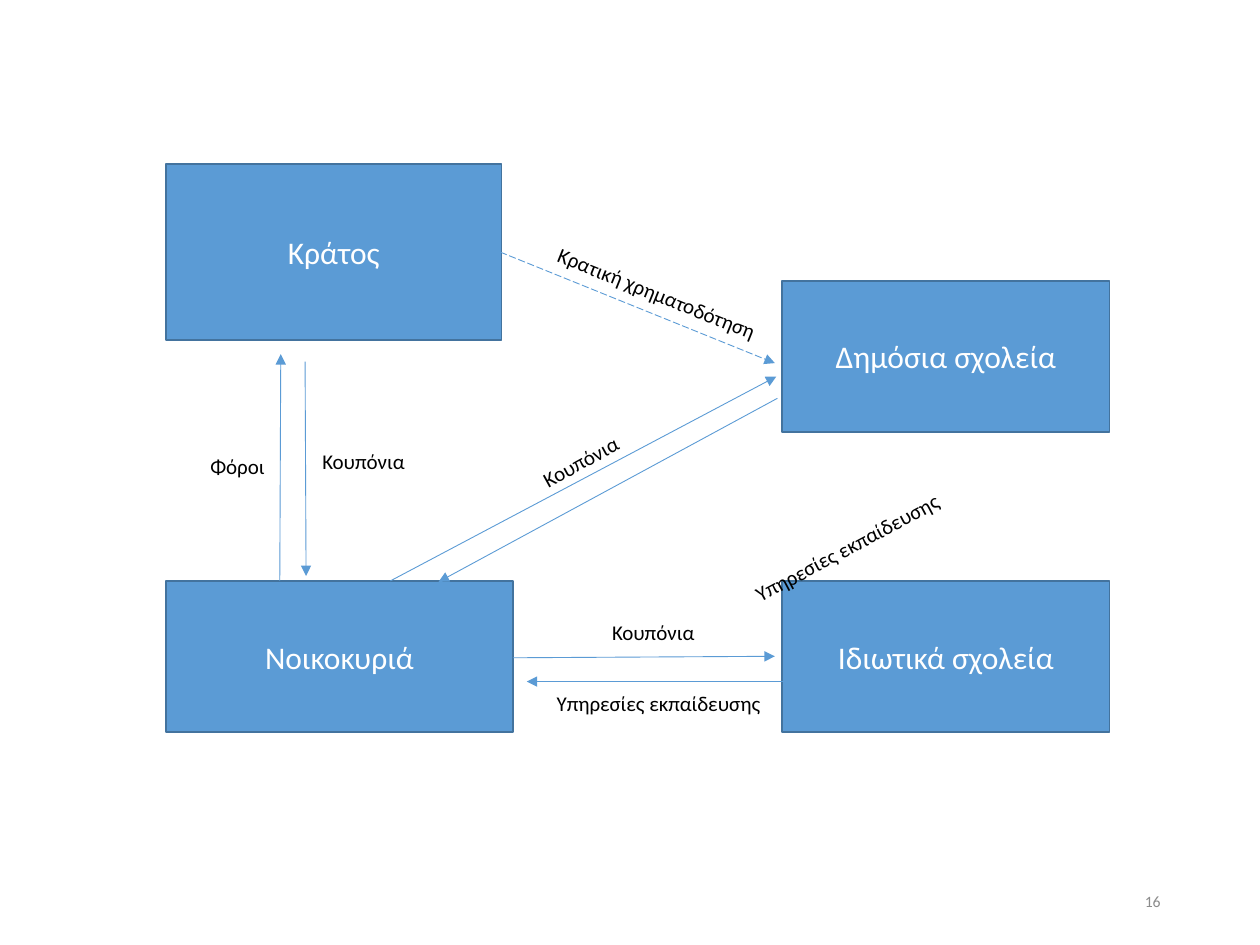
from lxml.etree import SubElement
from pptx import Presentation
from pptx.dml.color import RGBColor
from pptx.enum.dml import MSO_LINE
from pptx.enum.shapes import MSO_CONNECTOR, MSO_SHAPE
from pptx.enum.text import MSO_ANCHOR, PP_ALIGN
from pptx.oxml.ns import qn
from pptx.util import Cm, Pt

COLORS = {"fill": "5B9BD5", "border": "43739E", "white": "FFFFFF",
          "text": "000000", "number": "8C8C8C"}


class Diagram:
    font = "Calibri"

    def __init__(self, slide):
        self.s = slide

    def color(self, name):
        return RGBColor.from_string(COLORS[name])

    def set_text(self, tf, text, size, color, align):
        p = tf.paragraphs[0]
        p.text = text
        p.alignment = align
        p.font.name = self.font
        p.font.size = Pt(size)
        p.font.color.rgb = self.color(color)

    def box(self, text, x, y, w, h):
        sp = self.s.shapes.add_shape(MSO_SHAPE.RECTANGLE, Cm(x), Cm(y), Cm(w), Cm(h))
        sp.shadow.inherit = False
        sp.fill.solid()
        sp.fill.fore_color.rgb = self.color("fill")
        sp.line.color.rgb = self.color("border")
        sp.line.width = Pt(1)
        sp.text_frame.vertical_anchor = MSO_ANCHOR.MIDDLE
        self.set_text(sp.text_frame, text, 18, "white", PP_ALIGN.CENTER)

    def arrow(self, x1, y1, x2, y2, dash=None):
        c = self.s.shapes.add_connector(MSO_CONNECTOR.STRAIGHT, Cm(x1), Cm(y1), Cm(x2), Cm(y2))
        c.line.color.rgb = self.color("fill")
        c.line.width = Pt(0.5)
        if dash:
            c.line.dash_style = dash
        spPr = c._element.spPr
        SubElement(spPr.find(qn("a:ln")), qn("a:tailEnd"), type="triangle")
        SubElement(spPr, qn("a:effectLst"))

    def label(self, text, x, y, w, rotation=0, h=0.76, size=12, color="text",
              align=PP_ALIGN.LEFT, anchor=MSO_ANCHOR.TOP):
        sp = self.s.shapes.add_textbox(Cm(x), Cm(y), Cm(w), Cm(h))
        sp.rotation = rotation
        sp.text_frame.word_wrap = False
        sp.text_frame.vertical_anchor = anchor
        self.set_text(sp.text_frame, text, size, color, align)


def main():
    prs = Presentation()
    prs.slide_width, prs.slide_height = Cm(25.4), Cm(19.05)
    d = Diagram(prs.slides.add_slide(prs.slide_layouts[6]))

    # Actors
    left, right, lower = 3.35, 15.77, 11.71
    d.box("Νοικοκυριά", left, lower, 6.99, 3.05)
    d.box("Κράτος", left, 3.3, 6.76, 3.56)
    d.box("Δημόσια σχολεία", right, 5.66, 6.6, 3.05)
    d.box("Ιδιωτικά σχολεία", right, lower, 6.6, 3.05)

    # State and households
    d.arrow(5.64, lower, 5.66, 7.14)
    d.arrow(6.15, 7.29, 6.17, 11.61)
    d.label("Φόροι", 3.99, 9.02, 1.63)
    d.label("Κουπόνια", 6.25, 8.92, 2.29)

    # State and public schools
    d.arrow(10.08, 5.08, 15.62, 7.32, MSO_LINE.LONG_DASH)
    d.label("Κρατική χρηματοδότηση", 10.87, 5.54, 4.8, 21.8)

    # Households and public schools
    d.arrow(7.87, lower, 15.65, 7.59)
    d.arrow(15.67, 8.03, 8.84, 11.73)
    d.label("Κουπόνια", 10.62, 8.92, 2.18, 331.1)
    d.label("Υπηρεσίες εκπαίδευσης", 14.76, 10.64, 4.67, 331.9)

    # Households and private schools
    d.arrow(10.34, 13.26, 15.62, 13.23)
    d.arrow(16.46, 13.74, 10.62, 13.74)
    d.label("Κουπόνια", 12.09, 12.37, 2.18)
    d.label("Υπηρεσίες εκπαίδευσης", 10.97, 13.79, 4.67)

    # Slide number
    d.label("16", 17.93, 17.65, 5.72, h=1.02, size=9, color="number",
            align=PP_ALIGN.RIGHT, anchor=MSO_ANCHOR.MIDDLE)

    prs.save("out.pptx")


if __name__ == "__main__":
    main()
